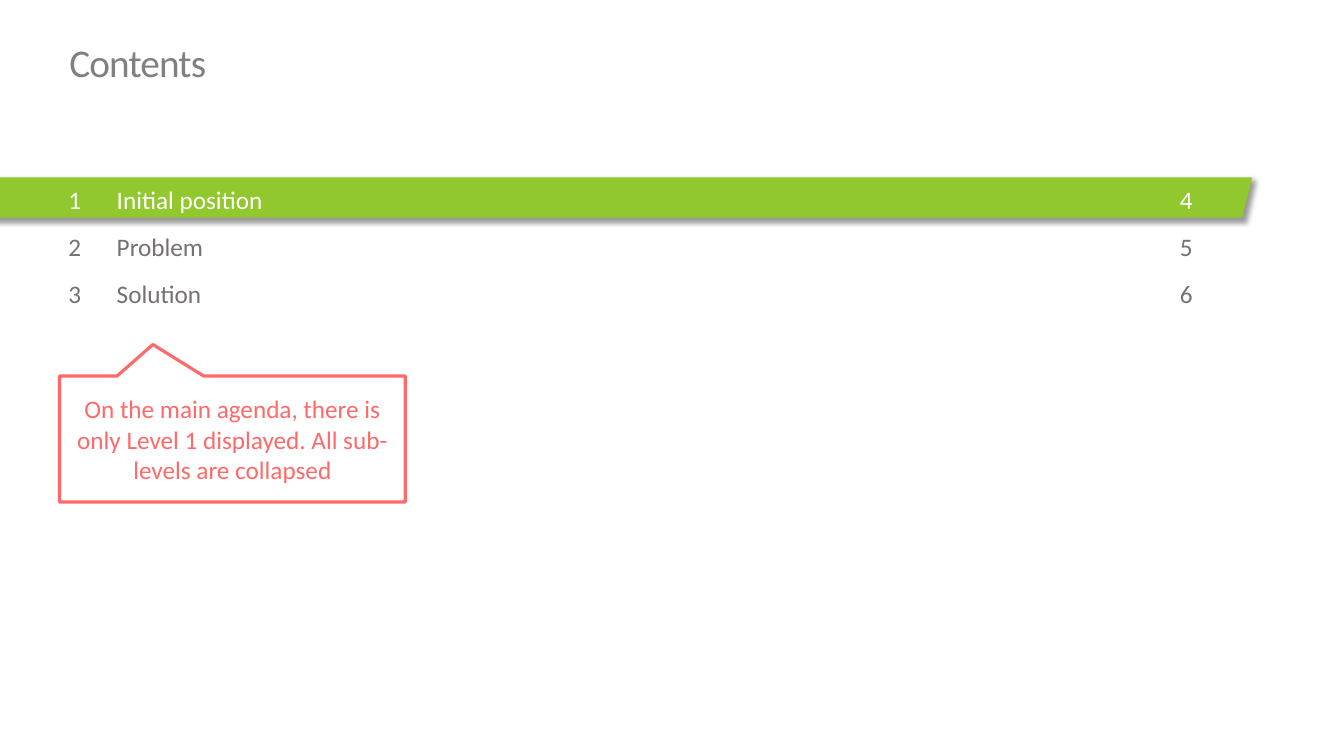
import pptx
import pptx.dml.color
import pptx.enum.shapes
import pptx.enum.text
import pptx.oxml
import pptx.oxml.ns
import pptx.util

Inches = pptx.util.Inches
SHAPE = pptx.enum.shapes.MSO_SHAPE
ALIGN = pptx.enum.text.PP_ALIGN

GREEN, WHITE, GREY, TITLE_GREY, CORAL = "91C82D", "FFFFFF", "767171", "808080", "FF6969"


def color(hex_code):
    return pptx.dml.color.RGBColor.from_string(hex_code)


def write(frame, text, size=18, fill=GREY, align=ALIGN.LEFT, line_spacing=None, tracking=None):
    frame.word_wrap = True
    frame.vertical_anchor = pptx.enum.text.MSO_ANCHOR.MIDDLE
    paragraph = frame.paragraphs[0]
    paragraph.alignment = align
    if line_spacing:
        paragraph.line_spacing = line_spacing
    run = paragraph.add_run()
    run.text = text
    run.font.name = "Calibri"
    run.font.size = pptx.util.Pt(size)
    run.font.color.rgb = color(fill)
    if tracking:
        run.font._element.set("spc", str(round(tracking * 100)))


class AgendaSlide:
    def __init__(self, slide):
        self.shapes = slide.shapes

    def label(self, text, left, top, width, height, **text_format):
        box = self.shapes.add_textbox(*map(Inches, (left, top, width, height)))
        write(box.text_frame, text, **text_format)

    def preset(self, kind, left, top, width, height):
        shape = self.shapes.add_shape(kind, *map(Inches, (left, top, width, height)))
        shape.shadow.inherit = False
        return shape

    def highlight(self, left, top, width, height):
        bar = self.preset(SHAPE.PARALLELOGRAM, left, top, width, height)
        bar.fill.solid()
        bar.fill.fore_color.rgb = color(GREEN)
        bar.line.fill.background()
        # Soft shadow: 4 pt blur, 3 pt offset, 45 degrees, 40 % black
        effects = bar._element.spPr.find(pptx.oxml.ns.qn("a:effectLst"))
        effects.append(pptx.oxml.parse_xml(
            f'<a:outerShdw {pptx.oxml.ns.nsdecls("a")} blurRad="{pptx.util.Pt(4)}" '
            f'dist="{pptx.util.Pt(3)}" dir="2700000" algn="tl" rotWithShape="0">'
            '<a:srgbClr val="000000"><a:alpha val="40000"/></a:srgbClr></a:outerShdw>'))

    def callout(self, text, left, top, width, height, pointer):
        note = self.preset(SHAPE.RECTANGULAR_CALLOUT, left, top, width, height)
        note.adjustments[0], note.adjustments[1] = pointer
        note.fill.background()
        note.line.color.rgb = color(CORAL)
        note.line.width = pptx.util.Pt(2.25)
        write(note.text_frame, text, fill=CORAL, align=ALIGN.CENTER)

    def entry(self, number, topic, page, top, height, fill):
        self.label(number, 0.58, top, 0.43, height, fill=fill)
        self.label(topic, 1.06, top, 6.24, height, fill=fill)
        self.label(page, 11.42, top, 0.69, height, fill=fill, align=ALIGN.CENTER)


def main():
    deck = pptx.Presentation()
    deck.slide_width, deck.slide_height = Inches(13.33), Inches(7.5)
    agenda = AgendaSlide(deck.slides.add_slide(deck.slide_layouts[6]))

    # Title
    agenda.label("Contents", 0.59, 0.18, 11.64, 0.93, size=28, fill=TITLE_GREY,
                 line_spacing=0.9, tracking=-0.6)

    # Agenda entries, with the current one highlighted
    first_top, row_height, current = 1.74, 0.47, 0
    agenda.highlight(-0.15, first_top + current * row_height + 0.02, 12.57, 0.4)
    for row, (topic, page) in enumerate([("Initial position", 4), ("Problem", 5), ("Solution", 6)]):
        agenda.entry(str(row + 1), topic, str(page), first_top + row * row_height, row_height,
                     WHITE if row == current else GREY)

    # Explanatory note
    agenda.callout("On the main agenda, there is only Level 1 displayed. All sub-levels are collapsed",
                   0.59, 3.73, 3.43, 1.25, pointer=(-0.23, -0.75))

    deck.save("out.pptx")


if __name__ == "__main__":
    main()
